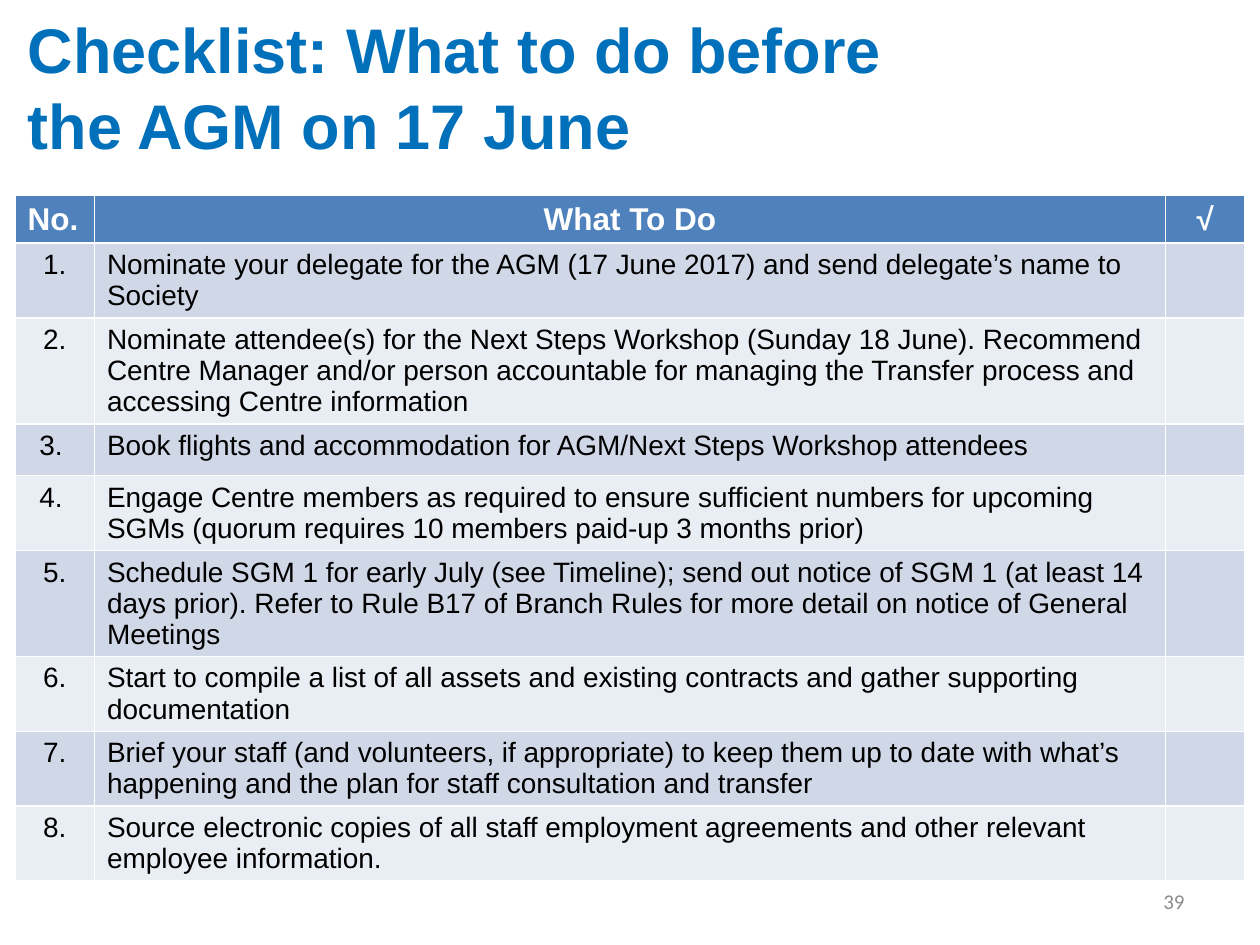
import pptx
import pptx.dml.color
import pptx.enum.text
import pptx.oxml.ns
import pptx.util
from dataclasses import dataclass
from lxml import etree
from pptx.util import Inches


@dataclass(frozen=True)
class Theme:
    font: str = "Arial"
    number_font: str = "Calibri"
    title: str = "0070BB"
    header_fill: str = "4F81BD"
    header_text: str = "FFFFFF"
    body_text: str = "000000"
    bands: tuple = ("D0D8E8", "E9EDF4")
    page_number: str = "8C8C8C"
    title_size: int = 36
    header_size: int = 18
    body_size: int = 16
    number_size: int = 12


theme = Theme()
align = pptx.enum.text.PP_ALIGN
anchor = pptx.enum.text.MSO_ANCHOR


def write(text_frame, text, size, color, bold=False, font=theme.font, alignment=align.LEFT):
    text_frame.text = text
    paragraph = text_frame.paragraphs[0]
    paragraph.alignment = alignment
    for run in paragraph.runs:
        run.font.name = font
        run.font.size = pptx.util.Pt(size)
        run.font.bold = bold
        run.font.color.rgb = pptx.dml.color.RGBColor.from_string(color)


def fill_cell(cell, color):
    cell.fill.solid()
    cell.fill.fore_color.rgb = pptx.dml.color.RGBColor.from_string(color)


presentation = pptx.Presentation()
presentation.slide_width = Inches(10)
presentation.slide_height = Inches(7.5)
slide = presentation.slides.add_slide(presentation.slide_layouts[5])

# Title
title = slide.shapes.title
title.left, title.top, title.width, title.height = (
    Inches(0.12), Inches(0.06), Inches(9), Inches(1.25))
title.text_frame.vertical_anchor = anchor.MIDDLE
write(title.text_frame, "Checklist: What to do before\vthe AGM on 17 June",
      theme.title_size, theme.title, bold=True)
# The line break takes the title size too, so that it does not stretch the line
for line_break in title.text_frame.paragraphs[0]._p.findall(pptx.oxml.ns.qn("a:br")):
    etree.SubElement(line_break, pptx.oxml.ns.qn("a:rPr"), sz=str(theme.title_size * 100))

# Checklist table
headers = [("No.", align.LEFT), ("What To Do", align.CENTER), ("√", align.CENTER)]
tasks = [
    ("1.", "Nominate your delegate for the AGM (17 June 2017) and send delegate’s name to "
           "Society"),
    ("2.", "Nominate attendee(s) for the Next Steps Workshop (Sunday 18 June). Recommend "
           "Centre Manager and/or person accountable for managing the Transfer process and "
           "accessing Centre information"),
    ("3. ", "Book flights and accommodation for AGM/Next Steps Workshop attendees"),
    ("4. ", "Engage Centre members as required to ensure sufficient numbers for upcoming "
            "SGMs (quorum requires 10 members paid-up 3 months prior)"),
    ("5.", "Schedule SGM 1 for early July (see Timeline); send out notice of SGM 1 (at least "
           "14 days prior). Refer to Rule B17 of Branch Rules for more detail on notice of "
           "General Meetings"),
    ("6.", "Start to compile a list of all assets and existing contracts and gather "
           "supporting documentation"),
    ("7.", "Brief your staff (and volunteers, if appropriate) to keep them up to date with "
           "what’s happening and the plan for staff consultation and transfer"),
    ("8.", "Source electronic copies of all staff employment agreements and other relevant "
           "employee information."),
]
row_height = Inches(0.41)
table = slide.shapes.add_table(
    len(tasks) + 1, len(headers), Inches(0.12), Inches(1.55), Inches(9.76),
    row_height * (len(tasks) + 1)).table
for column, width in zip(table.columns, (0.63, 8.5, 0.63)):
    column.width = Inches(width)
for row in table.rows:
    row.height = row_height
table.rows[0].height = Inches(0.37)

for column_index, (label, alignment) in enumerate(headers):
    cell = table.cell(0, column_index)
    fill_cell(cell, theme.header_fill)
    write(cell.text_frame, label, theme.header_size, theme.header_text,
          bold=True, alignment=alignment)

for row_index, (number, task) in enumerate(tasks, start=1):
    for column_index in range(len(headers)):
        fill_cell(table.cell(row_index, column_index), theme.bands[(row_index - 1) % 2])
    write(table.cell(row_index, 0).text_frame, number, theme.body_size, theme.body_text,
          alignment=align.CENTER)
    write(table.cell(row_index, 1).text_frame, task, theme.body_size, theme.body_text)

# Page number
page_number = slide.shapes.add_textbox(Inches(7.17), Inches(6.95), Inches(2.33), Inches(0.4))
page_number.text_frame.word_wrap = True
page_number.text_frame.vertical_anchor = anchor.MIDDLE
write(page_number.text_frame, "39", theme.number_size, theme.page_number,
      font=theme.number_font, alignment=align.RIGHT)

presentation.save("out.pptx")
